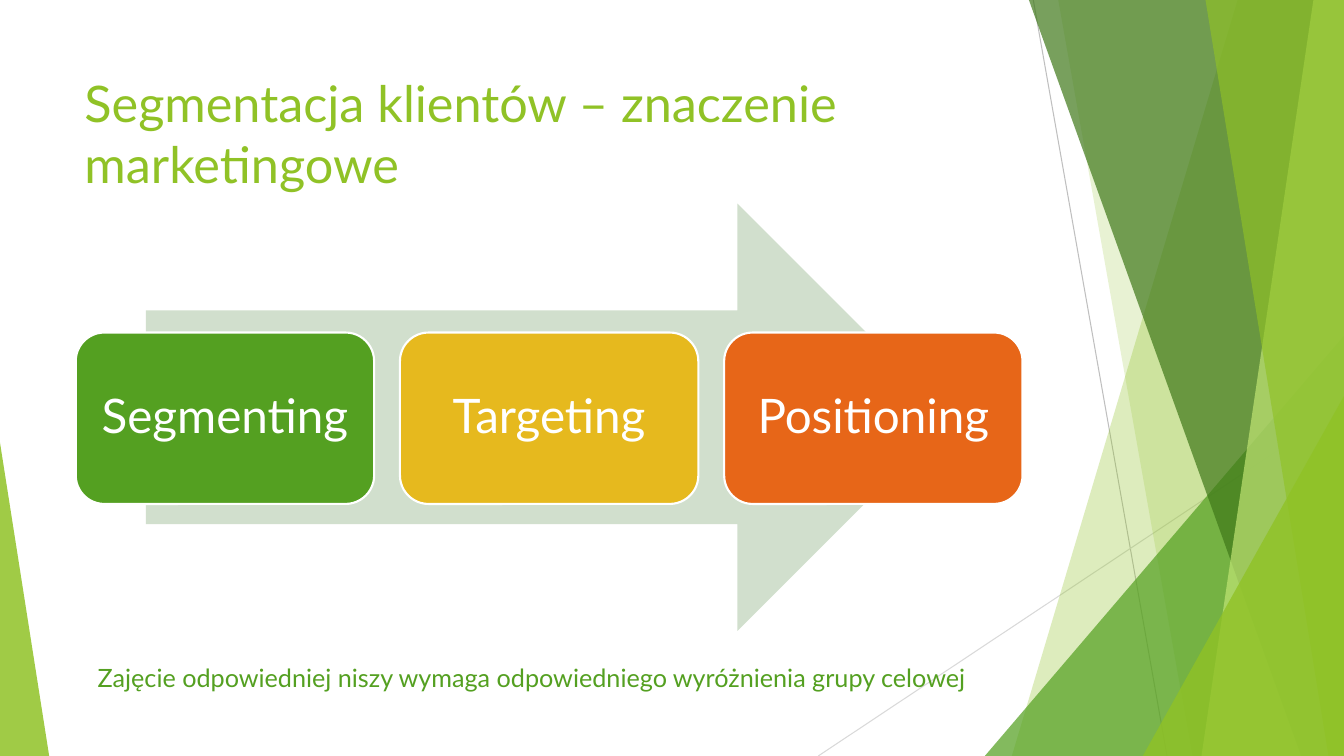
"""Build a slide on the marketing meaning of customer segmentation."""
import pptx
import pptx.util
import pptx.dml.color
import pptx.enum.shapes
import pptx.enum.text
import pptx.oxml.ns
import lxml.etree

Cm = pptx.util.Cm
Pt = pptx.util.Pt
SHAPES = pptx.enum.shapes.MSO_SHAPE
ANCHORS = pptx.enum.text.MSO_ANCHOR
ALIGNMENTS = pptx.enum.text.PP_ALIGN

FONT = "Lato"
WIDTH, HEIGHT = 33.87, 19.05
COLOURS = {
    "lime": "90C226", "green": "54A021", "forest": "3F7819", "pale lime": "C0E474",
    "sage": "D1DFCD", "yellow": "E6B91E", "orange": "E76618", "white": "FFFFFF",
    "grey": "BFBFBF", "light grey": "D9D9D9",
}

TITLE = "Segmentacja klientów – znaczenie marketingowe"
CAPTION = "Zajęcie odpowiedniej niszy wymaga odpowiedniego wyróżnienia grupy celowej"
STEPS = [("Segmenting", "green"), ("Targeting", "yellow"), ("Positioning", "orange")]

RAYS = [
    ((26.04, 0), (29.41, HEIGHT), "grey"),
    ((WIDTH, 10.24), (20.62, HEIGHT), "light grey"),
]
# kind, geometry, colour, opacity: panels give top and bottom x; triangles give left, top, width, apex
DECORATION = [
    ("panel", (31.19, 25.5), "lime", 30),
    ("panel", (26.67, 30.05), "lime", 20),
    ("triangle", (24.82, 8.46, 9.05, 1), "green", 72),
    ("panel", (25.93, 32.79), "forest", 70),
    ("panel", (33.1, 30.28), "pale lime", 70),
    ("panel", (30.38, 33.48), "lime", 65),
    ("triangle", (28.8, 9.98, 5.07, 1), "lime", 80),
    ("triangle", (0, 11.15, 1.24, 0), "lime", 85),
]

CARD_LEFT, CARD_TOP, CARD_WIDTH, CARD_HEIGHT, CARD_GAP = 1.91, 8.38, 7.52, 4.32, 0.65
CARD_INSET = 0.36


def colour(name):
    return pptx.dml.color.RGBColor.from_string(COLOURS[name])


def paint(shape, fill, opacity=100):
    shape.shadow.inherit = False
    shape.fill.solid()
    shape.fill.fore_color.rgb = colour(fill)
    shape.line.fill.background()
    if opacity < 100:
        qn = pptx.oxml.ns.qn
        hue = shape.fill._xPr.find(qn("a:solidFill")).find(qn("a:srgbClr"))
        lxml.etree.SubElement(hue, qn("a:alpha"), val=str(opacity * 1000))


def add_shape(slide, kind, left, top, width, height):
    return slide.shapes.add_shape(kind, Cm(left), Cm(top), Cm(width), Cm(height))


def add_ray(slide, start, end, hue):
    ray = slide.shapes.add_connector(
        pptx.enum.shapes.MSO_CONNECTOR.STRAIGHT, *map(Cm, start + end))
    ray.line.color.rgb = colour(hue)
    ray.line.width = Pt(0.75)
    lxml.etree.SubElement(ray._element.spPr, pptx.oxml.ns.qn("a:effectLst"))


def add_panel(slide, top_x, bottom_x):
    builder = slide.shapes.build_freeform(Cm(top_x), Cm(0))
    corners = [(WIDTH, 0), (WIDTH, HEIGHT), (bottom_x, HEIGHT)]
    builder.add_line_segments([(Cm(x), Cm(y)) for x, y in corners], close=True)
    return builder.convert_to_shape()


def add_triangle(slide, left, top, width, apex):
    shape = add_shape(slide, SHAPES.ISOSCELES_TRIANGLE, left, top, width, HEIGHT - top)
    shape.adjustments[0] = apex
    return shape


def write(shape, text, size, hue, wrap=True):
    shape.text_frame.word_wrap = wrap
    paragraph = shape.text_frame.paragraphs[0]
    run = paragraph.add_run()
    run.text = text
    run.font.name = FONT
    run.font.size = Pt(size)
    run.font.color.rgb = colour(hue)
    return paragraph


def add_card(slide, index, label, fill):
    left = CARD_LEFT + index * (CARD_WIDTH + CARD_GAP)
    card = add_shape(slide, SHAPES.ROUNDED_RECTANGLE, left, CARD_TOP, CARD_WIDTH, CARD_HEIGHT)
    paint(card, fill)
    card.line.color.rgb = colour("white")
    card.line.width = Pt(1.5)
    frame = card.text_frame
    frame.margin_left = frame.margin_right = Cm(CARD_INSET)
    frame.margin_top = frame.margin_bottom = Cm(CARD_INSET)
    frame.vertical_anchor = ANCHORS.MIDDLE
    paragraph = write(card, label, 34, "white")
    paragraph.alignment = ALIGNMENTS.CENTER
    paragraph.line_spacing = 0.9


def main():
    presentation = pptx.Presentation()
    presentation.slide_width, presentation.slide_height = Cm(WIDTH), Cm(HEIGHT)
    slide = presentation.slides.add_slide(presentation.slide_layouts[6])

    for start, end, hue in RAYS:
        add_ray(slide, start, end, hue)
    makers = {"panel": add_panel, "triangle": add_triangle}
    for kind, geometry, hue, opacity in DECORATION:
        paint(makers[kind](slide, *geometry), hue, opacity)

    title = slide.shapes.add_textbox(Cm(1.88), Cm(1.7), Cm(23.88), Cm(3.66))
    write(title, TITLE, 36, "lime")

    paint(add_shape(slide, SHAPES.RIGHT_ARROW, 3.68, 5.13, 20.29, 10.77), "sage")
    for index, (label, fill) in enumerate(STEPS):
        add_card(slide, index, label, fill)

    caption = slide.shapes.add_textbox(Cm(2.21), Cm(16.56), Cm(23.22), Cm(1.02))
    write(caption, CAPTION, 18, "green", wrap=False)
    caption.text_frame.auto_size = pptx.enum.text.MSO_AUTO_SIZE.SHAPE_TO_FIT_TEXT

    presentation.save("out.pptx")


if __name__ == "__main__":
    main()
